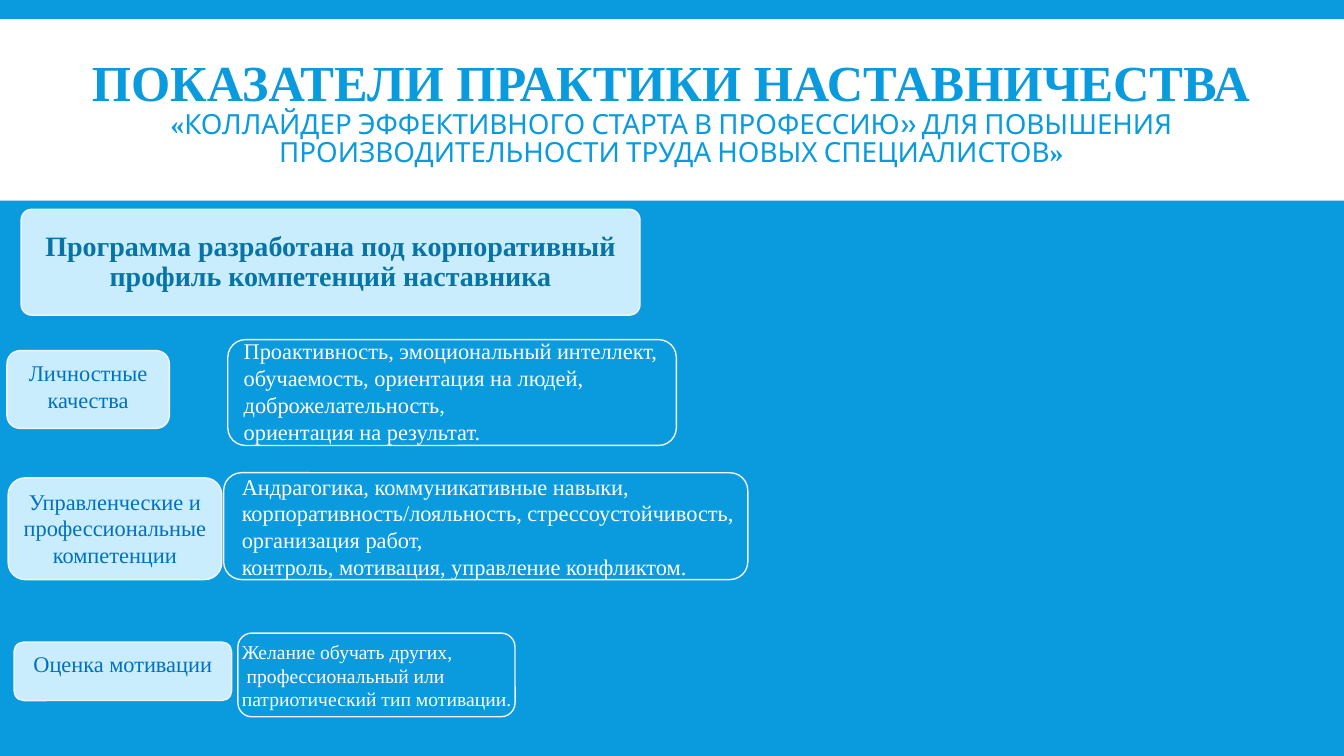
from dataclasses import dataclass

from pptx import Presentation
from pptx import util as u
from pptx.dml.color import RGBColor
from pptx.enum import shapes, text

BLUE = RGBColor(0x09, 0x9B, 0xDD)
PALE = RGBColor(0xC9, 0xED, 0xFD)
EDGE = RGBColor(0xF2, 0xF2, 0xF2)
WHITE = RGBColor(0xFF, 0xFF, 0xFF)
HEADING = RGBColor(0x07, 0x74, 0xA6)
LABEL = RGBColor(0x00, 0x70, 0xC0)
SERIF, SANS = "Times New Roman", "Cabin"
LEFT, CENTER, JUSTIFY = text.PP_ALIGN.LEFT, text.PP_ALIGN.CENTER, text.PP_ALIGN.JUSTIFY


@dataclass(frozen=True)
class Box:
    left: float
    top: float
    width: float
    height: float

    def emu(self) -> list[u.Length]:
        return [u.Pt(v) for v in (self.left, self.top, self.width, self.height)]


@dataclass(frozen=True)
class Font:
    size: float
    color: RGBColor
    bold: bool = False
    name: str = SERIF


@dataclass(frozen=True)
class Indicator:
    label: str
    label_box: Box
    frame: Box
    lines: tuple[str, ...]
    text_box: Box
    size: float = 16
    align: text.PP_ALIGN = LEFT


INDICATORS = (
    Indicator("Личностные качества", Box(5, 250.5, 116, 55.5), Box(162.7, 242.6, 320.4, 75.6),
              ("Проактивность, эмоциональный интеллект,", "обучаемость, ориентация на людей,",
               "доброжелательность,", "ориентация на результат."),
              Box(167, 237.6, 480, 85), align=JUSTIFY),
    Indicator("Управленческие и профессиональные компетенции",
              Box(5.8, 341.3, 152.6, 72.7), Box(159.8, 337.7, 374.4, 76.3),
              ("Андрагогика, коммуникативные навыки, "
               "корпоративность/лояльность, стрессоустойчивость,",
               "организация работ,", "контроль, мотивация, управление конфликтом."),
              Box(165.6, 334.1, 480, 85)),
    Indicator("Оценка мотивации", Box(10, 458.6, 155.5, 41.8), Box(169.9, 452.2, 198, 59.8),
              ("Желание обучать других,", " профессиональный или",
               "патриотический тип мотивации."),
              Box(165.6, 453.6, 330.5, 58.3), size=14),
)


def add_run(p, words: str, font: Font) -> None:
    r = p.add_run()
    r.text = words
    r.font.size, r.font.bold, r.font.name = u.Pt(font.size), font.bold, font.name
    r.font.color.rgb = font.color


def add_lines(tf, lines: tuple[str, ...], font: Font, align: text.PP_ALIGN) -> None:
    tf.word_wrap = True
    for i, line in enumerate(lines):
        p = tf.add_paragraph() if i else tf.paragraphs[0]
        p.alignment = align
        add_run(p, line, font)


def add_panel(s, box: Box, fill: RGBColor, corner: float = 0.167):
    sp = s.shapes.add_shape(shapes.MSO_SHAPE.ROUNDED_RECTANGLE, *box.emu())
    sp.adjustments[0] = corner
    sp.shadow.inherit = False
    sp.fill.solid()
    sp.fill.fore_color.rgb = fill
    sp.line.color.rgb = EDGE
    sp.line.width = u.Pt(1)
    sp.text_frame.vertical_anchor = text.MSO_ANCHOR.TOP
    return sp


def add_title(s) -> None:
    # White band
    band = s.shapes.add_shape(shapes.MSO_SHAPE.RECTANGLE, *Box(0, 13.7, 960, 129.6).emu())
    band.shadow.inherit = False
    band.fill.solid()
    band.fill.fore_color.rgb = WHITE
    band.line.fill.background()

    # Title and subtitle in one paragraph
    tf = s.shapes.add_textbox(*Box(15.1, 22.3, 928.8, 118.8).emu()).text_frame
    tf.word_wrap = True
    tf.vertical_anchor = text.MSO_ANCHOR.MIDDLE
    p = tf.paragraphs[0]
    p.alignment, p.line_spacing = CENTER, 0.85
    quote = Font(19.8, BLUE, bold=True)
    add_run(p, "ПОКАЗАТЕЛИ ПРАКТИКИ НАСТАВНИЧЕСТВА", Font(36, BLUE, bold=True))
    p.add_line_break()
    add_run(p, "«", quote)
    add_run(p, "КОЛЛАЙДЕР ЭФФЕКТИВНОГО СТАРТА В ПРОФЕССИЮ» ДЛЯ ПОВЫШЕНИЯ "
               "ПРОИЗВОДИТЕЛЬНОСТИ ТРУДА НОВЫХ СПЕЦИАЛИСТОВ", Font(19.8, BLUE, name=SANS))
    add_run(p, "»", quote)


def add_heading(s) -> None:
    tf = add_panel(s, Box(15.1, 149.5, 442.1, 75.6), PALE, 0.1).text_frame
    tf.vertical_anchor = text.MSO_ANCHOR.MIDDLE
    tf.margin_left = tf.margin_right = u.Pt(3)
    add_lines(tf, ("Программа разработана под корпоративный профиль компетенций наставника",),
              Font(20, HEADING, bold=True), CENTER)
    tf.paragraphs[0].line_spacing = 0.9


def add_indicator(s, item: Indicator) -> None:
    label = add_panel(s, item.label_box, PALE)
    add_lines(label.text_frame, (item.label,), Font(16, LABEL), CENTER)
    add_panel(s, item.frame, BLUE)
    tf = s.shapes.add_textbox(*item.text_box.emu()).text_frame
    add_lines(tf, item.lines, Font(item.size, WHITE), item.align)
    tf.auto_size = text.MSO_AUTO_SIZE.SHAPE_TO_FIT_TEXT


def main() -> None:
    prs = Presentation()
    prs.slide_width, prs.slide_height = u.Pt(960), u.Pt(540)
    s = prs.slides.add_slide(prs.slide_layouts[6])
    s.background.fill.solid()
    s.background.fill.fore_color.rgb = BLUE
    add_title(s)
    add_heading(s)
    for item in INDICATORS:
        add_indicator(s, item)
    prs.save("out.pptx")


if __name__ == "__main__":
    main()
